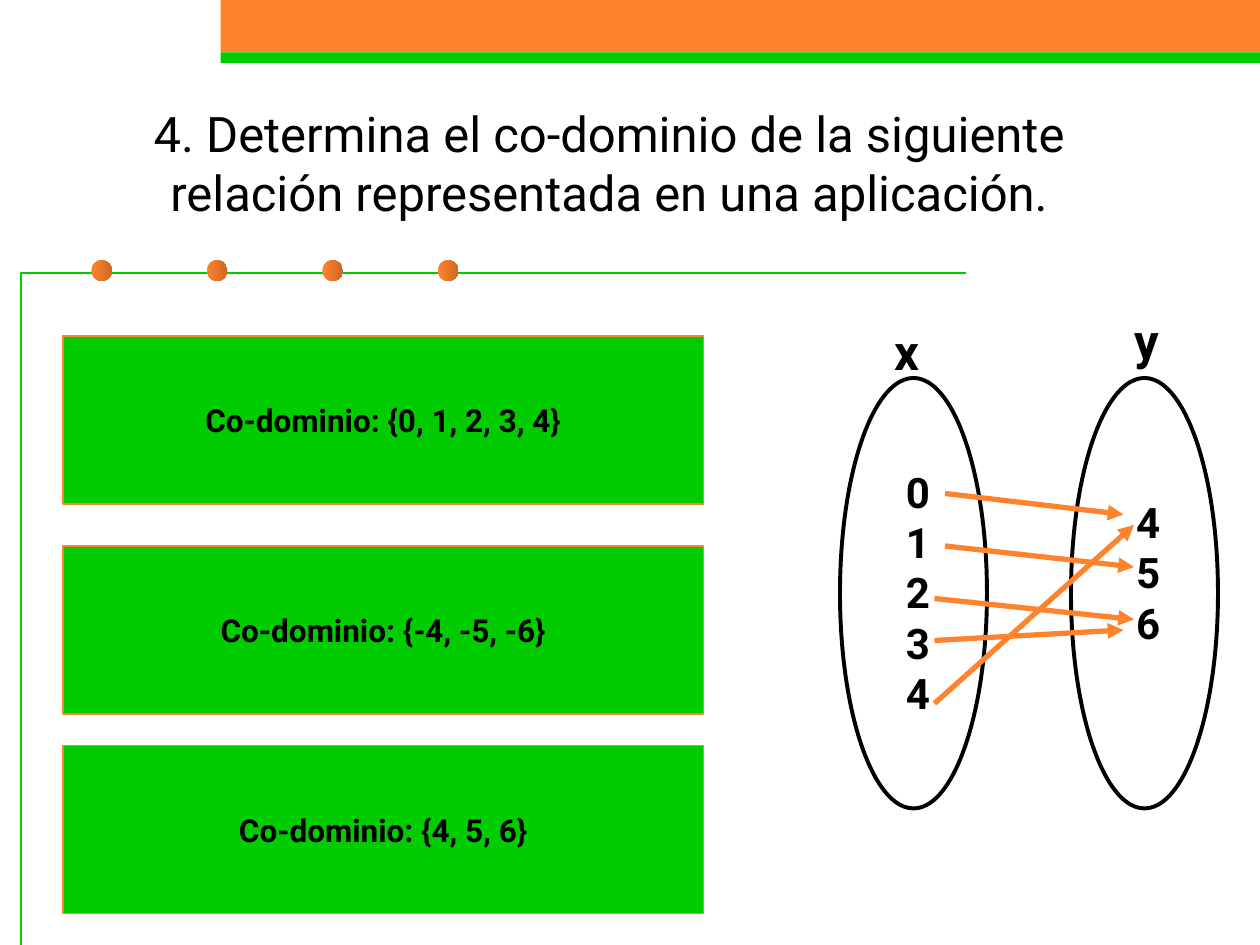
import pptx
import pptx.util
import pptx.dml.color
import pptx.enum.shapes
import pptx.enum.text
import pptx.oxml.ns
import lxml.etree

Pt = pptx.util.Pt
SHAPES = pptx.enum.shapes.MSO_SHAPE
ANCHOR = pptx.enum.text.MSO_ANCHOR
ALIGN = pptx.enum.text.PP_ALIGN
FIT = pptx.enum.text.MSO_AUTO_SIZE

COLORS = {"orange": "FF822D", "rust": "CD6924", "green": "00CC00", "black": "000000"}
TITLE = {"name": "Roboto", "size": Pt(28), "bold": False}
SET_NAME = {"name": "Roboto", "size": Pt(28), "bold": True}
MEMBER = {"name": "Roboto", "size": Pt(24), "bold": True}
ANSWER = {"name": "Roboto", "size": Pt(18), "bold": True}
LABEL_FRAME = {"word_wrap": False, "auto_size": FIT.SHAPE_TO_FIT_TEXT}
CENTERED_FRAME = {"vertical_anchor": ANCHOR.MIDDLE}


def color(name):
    return pptx.dml.color.RGBColor.from_string(COLORS[name])


def set_all(target, values):
    for name, value in values.items():
        setattr(target, name, value)


def write(frame, lines, font, frame_format, align=ALIGN.LEFT):
    set_all(frame, frame_format)
    for index, line in enumerate(lines):
        para = frame.add_paragraph() if index else frame.paragraphs[0]
        para.alignment = align
        span = para.add_run()
        span.text = line
        set_all(span.font, font)
        span.font.color.rgb = color("black")


def add_shape(page, kind, box, fill=None, line=None, width=1):
    shape = page.shapes.add_shape(kind, *map(Pt, box))
    paint(shape, fill, line, width)
    return shape


def paint(shape, fill, line, width):
    shape.shadow.inherit = False
    if fill:
        shape.fill.solid()
        shape.fill.fore_color.rgb = color(fill)
    else:
        shape.fill.background()
    if line:
        shape.line.color.rgb = color(line)
        shape.line.width = Pt(width)
    else:
        shape.line.fill.background()


def add_label(page, left, top, width, height, lines, font):
    label = page.shapes.add_textbox(*map(Pt, (left, top, width, height)))
    write(label.text_frame, lines, font, LABEL_FRAME)


def add_arrow(page, start, end):
    arrow = page.shapes.add_connector(
        pptx.enum.shapes.MSO_CONNECTOR.STRAIGHT, *map(Pt, start + end))
    arrow.line.color.rgb = color("orange")
    arrow.line.width = Pt(3)
    qn = pptx.oxml.ns.qn
    lxml.etree.SubElement(arrow.line._get_or_add_ln(), qn("a:tailEnd"), type="triangle")
    lxml.etree.SubElement(arrow._element.spPr, qn("a:effectLst"))


def draw_banner(page, left, top, width, height):
    stripe = 6
    add_shape(page, SHAPES.RECTANGLE, (left, top, width, height - stripe), "orange")
    add_shape(page, SHAPES.RECTANGLE, (left, top + height - stripe, width, stripe), "green")


def draw_frame(page, left, top, width, height):
    builder = page.shapes.build_freeform(Pt(left), Pt(top + height))
    builder.add_line_segments(
        [(Pt(left), Pt(top)), (Pt(left + width), Pt(top))], close=False)
    paint(builder.convert_to_shape(), None, "green", 0.75)
    for index in range(4):
        bead = add_shape(page, SHAPES.OVAL,
                         (left + 40.2 + index * 66, top - 7.2, 11.8, 11.8))
        bead.fill.gradient()
        bead.fill.gradient_angle = 0
        for stop, name in zip(bead.fill.gradient_stops, ("orange", "rust")):
            stop.color.rgb = color(name)


def place_title(page, left, top, width, height, text):
    title = page.shapes.title
    set_all(title, {"left": Pt(left), "top": Pt(top),
                    "width": Pt(width), "height": Pt(height)})
    write(title.text_frame, [text], TITLE, CENTERED_FRAME, ALIGN.CENTER)


def draw_answers(page, left, width, height, answers):
    for top, text in answers:
        button = add_shape(page, SHAPES.ACTION_BUTTON_CUSTOM,
                           (left, top, width, height), "green", "orange")
        write(button.text_frame, [text], ANSWER,
              CENTERED_FRAME | {"word_wrap": False}, ALIGN.CENTER)


def draw_mapping(page, left, top, width, height):
    oval_width = 84
    for oval_left in (left, left + width - oval_width):
        add_shape(page, SHAPES.OVAL, (oval_left, top, oval_width, height),
                  None, "black", 2.25)
    add_label(page, left + 24, top - 36, 31.7, 41, ["x"], SET_NAME)
    add_label(page, left + 161.5, top - 42, 31, 41, ["y"], SET_NAME)
    add_label(page, left + 30.5, top + 46.8, 29.5, 151.2, list("01234"), MEMBER)
    add_label(page, left + 162.2, top + 64.1, 29.5, 122.4, list("456"), MEMBER)
    arrows = [
        ((60, 66), (162, 78)),
        ((60, 96), (168, 108)),
        ((54, 126), (168, 138)),
        ((54, 150), (162, 144)),
        ((54, 186), (168, 84)),
    ]
    for (x1, y1), (x2, y2) in arrows:
        add_arrow(page, (left + x1, top + y1), (left + x2, top + y2))


def main():
    deck = pptx.Presentation()
    deck.slide_width, deck.slide_height = Pt(720), Pt(540)
    page = deck.slides.add_slide(deck.slide_layouts[5])
    draw_banner(page, 126, 0, 594, 36)
    draw_frame(page, 12, 156, 540, 384)
    place_title(page, 42, 48, 612, 90,
                "4. Determina el co-dominio de la siguiente relación "
                "representada en una aplicación.")
    draw_answers(page, 36, 366, 96, [
        (192, "Co-dominio: {0, 1, 2, 3, 4}"),
        (312, "Co-dominio: {-4, -5, -6}"),
        (426, "Co-dominio: {4, 5, 6}"),
    ])
    draw_mapping(page, 480, 216, 216, 246)
    deck.save("out.pptx")


if __name__ == "__main__":
    main()
